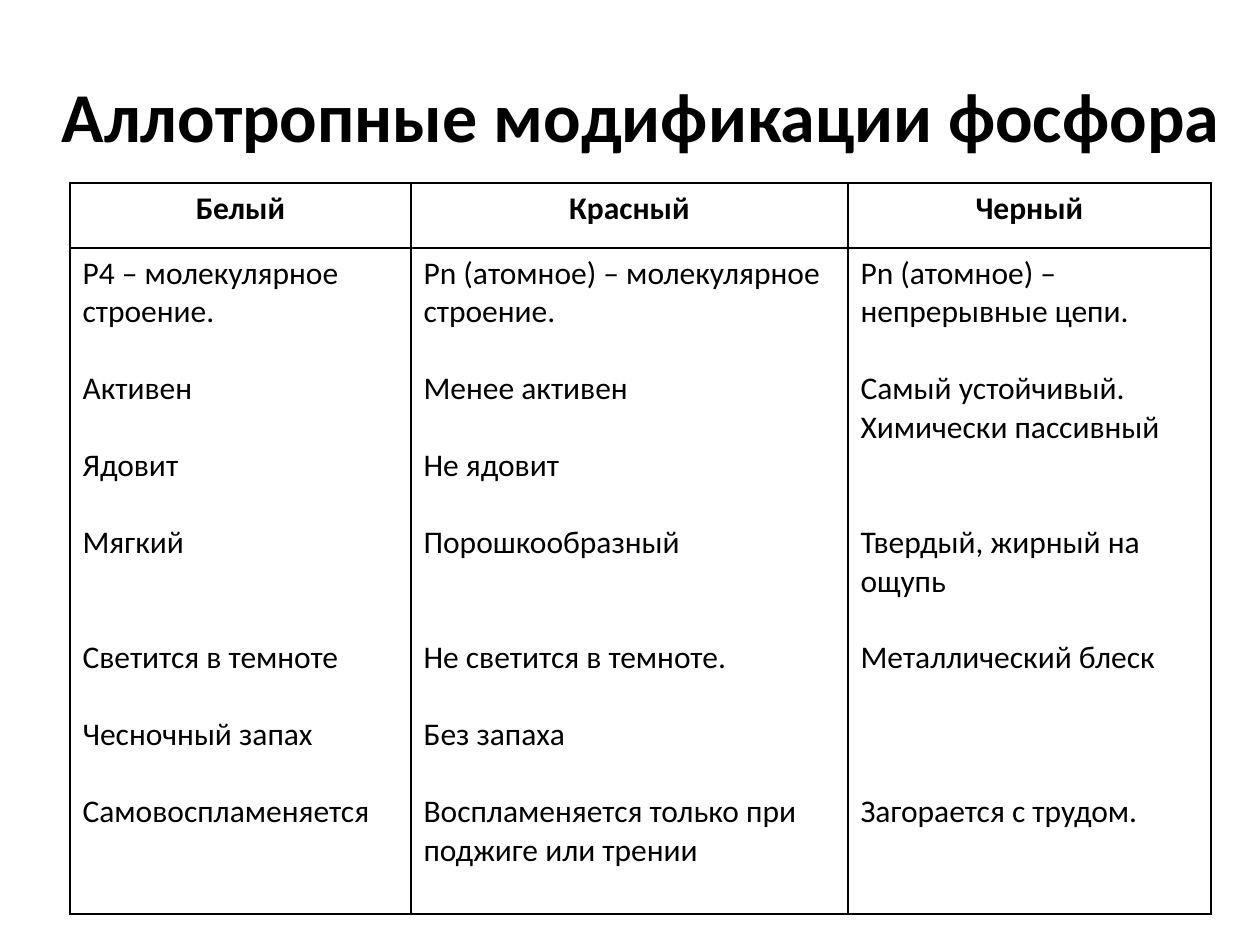
from dataclasses import dataclass

from lxml.etree import SubElement
from pptx import Presentation
from pptx.dml.color import RGBColor
from pptx.enum.text import MSO_ANCHOR, PP_ALIGN
from pptx.oxml.ns import qn
from pptx.util import Emu, Pt


@dataclass(frozen=True)
class Theme:
    """Colours, typeface and type sizes of the slide."""
    ink: str = "000000"
    font: str = "Calibri"
    title_size: int = 40
    body_size: int = 18
    line_pitch: int = 22
    rule_width: int = 1


THEME = Theme()
EMU_PER_PX = 914400 / 126
TITLE = "Аллотропные модификации фосфора"
COLUMN_WIDTHS = (341, 437, 363)
ROW_HEIGHTS = (65, 666)
ALLOTROPES = (
    ("Белый", (
        (0, "Р4 – молекулярное строение."),
        (1, "Активен"),
        (1, "Ядовит"),
        (1, "Мягкий"),
        (2, "Светится в темноте"),
        (1, "Чесночный запах"),
        (1, "Самовоспламеняется"),
    )),
    ("Красный", (
        (0, "Pn (атомное) – молекулярное строение."),
        (1, "Менее активен"),
        (1, "Не ядовит"),
        (1, "Порошкообразный"),
        (2, "Не светится в темноте."),
        (1, "Без запаха"),
        (1, "Воспламеняется только при поджиге или трении"),
    )),
    ("Черный", (
        (0, "Pn (атомное) – непрерывные цепи."),
        (1, "Самый устойчивый. Химически пассивный"),
        (2, "Твердый, жирный на ощупь"),
        (1, "Металлический блеск"),
        (3, "Загорается с трудом."),
    )),
)


def px(length):
    """Turn pixels into EMU."""
    return Emu(round(length * EMU_PER_PX))


def write(paragraph, wording, size, bold=False, align=PP_ALIGN.LEFT, lines_before=0):
    """Add one styled run, set off by a number of empty line heights."""
    paragraph.alignment = align
    paragraph.space_before = Pt(lines_before * THEME.line_pitch)
    run = paragraph.add_run()
    run.text = wording
    run.font.name = THEME.font
    run.font.size = Pt(size)
    run.font.bold = bold
    run.font.color.rgb = RGBColor.from_string(THEME.ink)


def rule_cell(cell):
    """Draw all four borders of a cell and leave it unfilled."""
    properties = cell._tc.get_or_add_tcPr()
    for side in ("a:lnL", "a:lnR", "a:lnT", "a:lnB"):
        border = SubElement(properties, qn(side), w=str(Pt(THEME.rule_width)))
        fill = SubElement(border, qn("a:solidFill"))
        SubElement(fill, qn("a:srgbClr"), val=THEME.ink)
    cell.fill.background()
    cell.vertical_anchor = MSO_ANCHOR.TOP


def add_title(slide, left, top, width, height):
    """Place the centred heading on one line."""
    heading = slide.shapes.add_textbox(px(left), px(top), px(width), px(height))
    heading.text_frame.word_wrap = False
    write(heading.text_frame.paragraphs[0], TITLE, THEME.title_size, True, PP_ALIGN.CENTER)


def add_comparison(slide, left, top):
    """Place the table that compares the allotropes column by column."""
    frame = slide.shapes.add_table(
        len(ROW_HEIGHTS), len(ALLOTROPES), px(left), px(top),
        px(sum(COLUMN_WIDTHS)), px(sum(ROW_HEIGHTS)))
    table = frame.table
    table.first_row = table.horz_banding = False
    for row, height in zip(table.rows, ROW_HEIGHTS):
        row.height = px(height)
    for column, (allotrope, traits) in enumerate(ALLOTROPES):
        table.columns[column].width = px(COLUMN_WIDTHS[column])
        head, body = table.cell(0, column), table.cell(1, column)
        rule_cell(head)
        rule_cell(body)
        write(head.text_frame.paragraphs[0], allotrope, THEME.body_size, True, PP_ALIGN.CENTER)
        for index, (gap, trait) in enumerate(traits):
            text = body.text_frame
            paragraph = text.add_paragraph() if index else text.paragraphs[0]
            write(paragraph, trait, THEME.body_size, lines_before=gap)


def main():
    """Build and save the slide."""
    deck = Presentation()
    deck.slide_width, deck.slide_height = px(1260), px(945)
    slide = deck.slides.add_slide(deck.slide_layouts[6])
    add_comparison(slide, 70, 183)
    add_title(slide, 44, 66, 1193, 97)
    deck.save("out.pptx")


if __name__ == "__main__":
    main()
